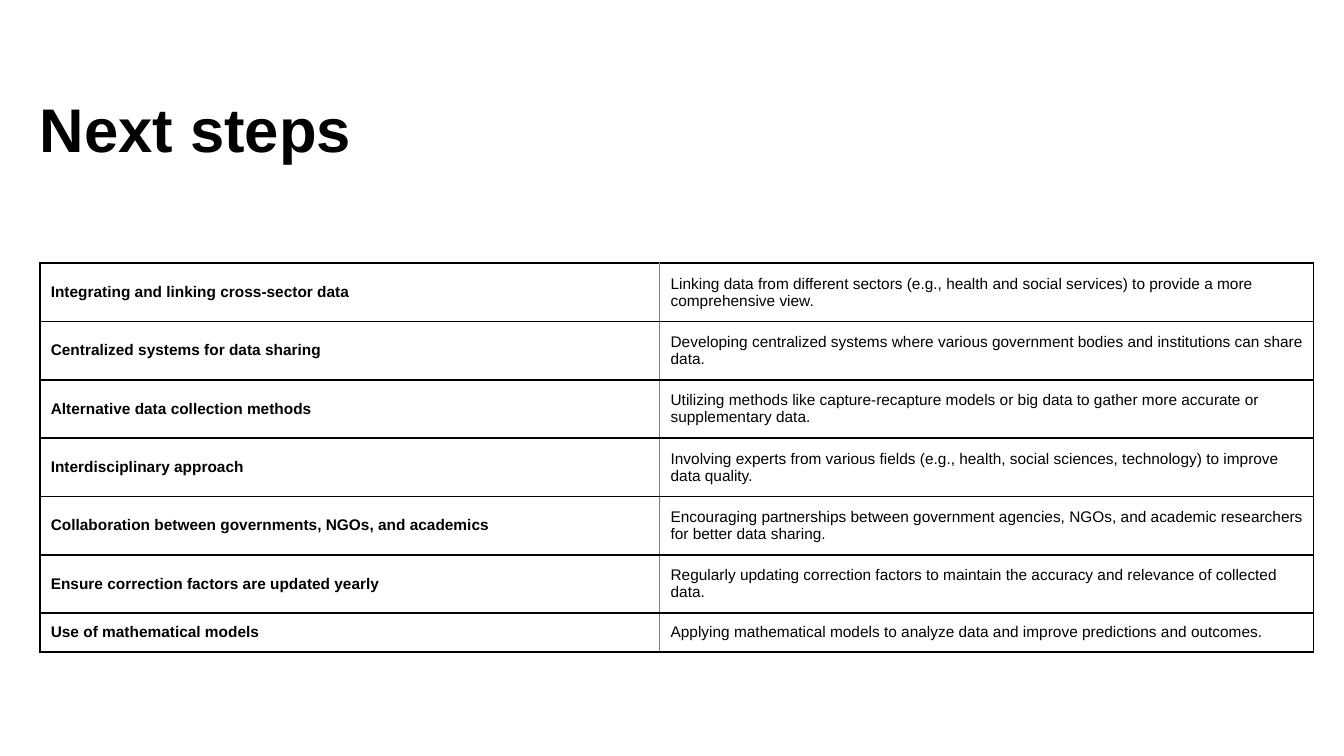
from lxml.etree import SubElement
from pptx import Presentation
from pptx.dml.color import RGBColor
from pptx.enum.text import MSO_ANCHOR, MSO_AUTO_SIZE, PP_ALIGN
from pptx.oxml.ns import qn
from pptx.util import Cm, Pt

BLACK = RGBColor(0x00, 0x00, 0x00)
GRAY = RGBColor(0x80, 0x80, 0x80)
OUTER_RULE = (BLACK, 1.5)
COLUMN_RULE = (GRAY, 0.5)

STEPS = [
    ("Integrating and linking cross-sector data",
     "Linking data from different sectors (e.g., health and social services) to provide a more comprehensive view."),
    ("Centralized systems for data sharing",
     "Developing centralized systems where various government bodies and institutions can share data."),
    ("Alternative data collection methods",
     "Utilizing methods like capture-recapture models or big data to gather more accurate or supplementary data."),
    ("Interdisciplinary approach",
     "Involving experts from various fields (e.g., health, social sciences, technology) to improve data quality."),
    ("Collaboration between governments, NGOs, and academics",
     "Encouraging partnerships between government agencies, NGOs, and academic researchers for better data sharing."),
    ("Ensure correction factors are updated yearly",
     "Regularly updating correction factors to maintain the accuracy and relevance of collected data."),
    ("Use of mathematical models",
     "Applying mathematical models to analyze data and improve predictions and outcomes."),
]
COLUMN_WIDTHS = [15.62, 16.48]
ROW_HEIGHTS = [1.47] * 6 + [0.98]


def apply(target, values):
    for name, value in values.items():
        setattr(target, name, value)


class SlideBuilder:
    font_name = "Arial"

    def __init__(self, deck):
        self.slide = deck.slides.add_slide(deck.slide_layouts[5])

    def paragraph(self, frame, text, size, bold):
        paragraph = frame.paragraphs[0]
        paragraph.text = text
        paragraph.alignment = PP_ALIGN.LEFT
        apply(paragraph.font, {"name": self.font_name, "size": Pt(size), "bold": bold})
        paragraph.font.color.rgb = BLACK
        return paragraph

    def title(self, text, left, top, width, height):
        heading = self.slide.shapes.title
        apply(heading, {"left": Cm(left), "top": Cm(top), "width": Cm(width), "height": Cm(height)})
        apply(heading.text_frame, {
            "margin_left": 0, "margin_top": 0, "margin_right": 0, "margin_bottom": 0,
            "vertical_anchor": MSO_ANCHOR.TOP, "word_wrap": True, "auto_size": MSO_AUTO_SIZE.NONE,
        })
        self.paragraph(heading.text_frame, text, 44, True).line_spacing = 0.9

    def border(self, cell, side, color, width):
        line = SubElement(cell._tc.get_or_add_tcPr(), qn(f"a:ln{side}"), w=str(Pt(width)))
        fill = SubElement(line, qn("a:solidFill"))
        SubElement(fill, qn("a:srgbClr"), val=str(color))

    def cell(self, cell, text, is_label):
        apply(cell, {
            "margin_left": Cm(0.28), "margin_right": Cm(0.08),
            "margin_top": Cm(0.2), "margin_bottom": Cm(0.2),
            "vertical_anchor": MSO_ANCHOR.MIDDLE,
        })
        self.paragraph(cell.text_frame, text, 11, is_label)
        rules = {
            "L": OUTER_RULE if is_label else COLUMN_RULE,
            "R": COLUMN_RULE if is_label else OUTER_RULE,
            "T": OUTER_RULE,
            "B": OUTER_RULE,
        }
        for side, rule in rules.items():
            self.border(cell, side, *rule)
        cell.fill.background()

    def table(self, rows, left, top, widths, heights):
        grid = self.slide.shapes.add_table(
            len(rows), len(widths), Cm(left), Cm(top), Cm(sum(widths)), Cm(sum(heights))).table
        apply(grid, {"first_row": False, "horz_banding": False})
        for column, width in zip(grid.columns, widths):
            column.width = Cm(width)
        for row, height, texts in zip(grid.rows, heights, rows):
            row.height = Cm(height)
            for index, (cell, text) in enumerate(zip(row.cells, texts)):
                self.cell(cell, text, is_label=index == 0)


def main():
    deck = Presentation()
    apply(deck, {"slide_width": Cm(33.87), "slide_height": Cm(19.05)})
    builder = SlideBuilder(deck)
    builder.title("Next steps", 1, 2.5, 25, 3.8)
    builder.table(STEPS, 1, 6.63, COLUMN_WIDTHS, ROW_HEIGHTS)
    deck.save("out.pptx")


if __name__ == "__main__":
    main()
